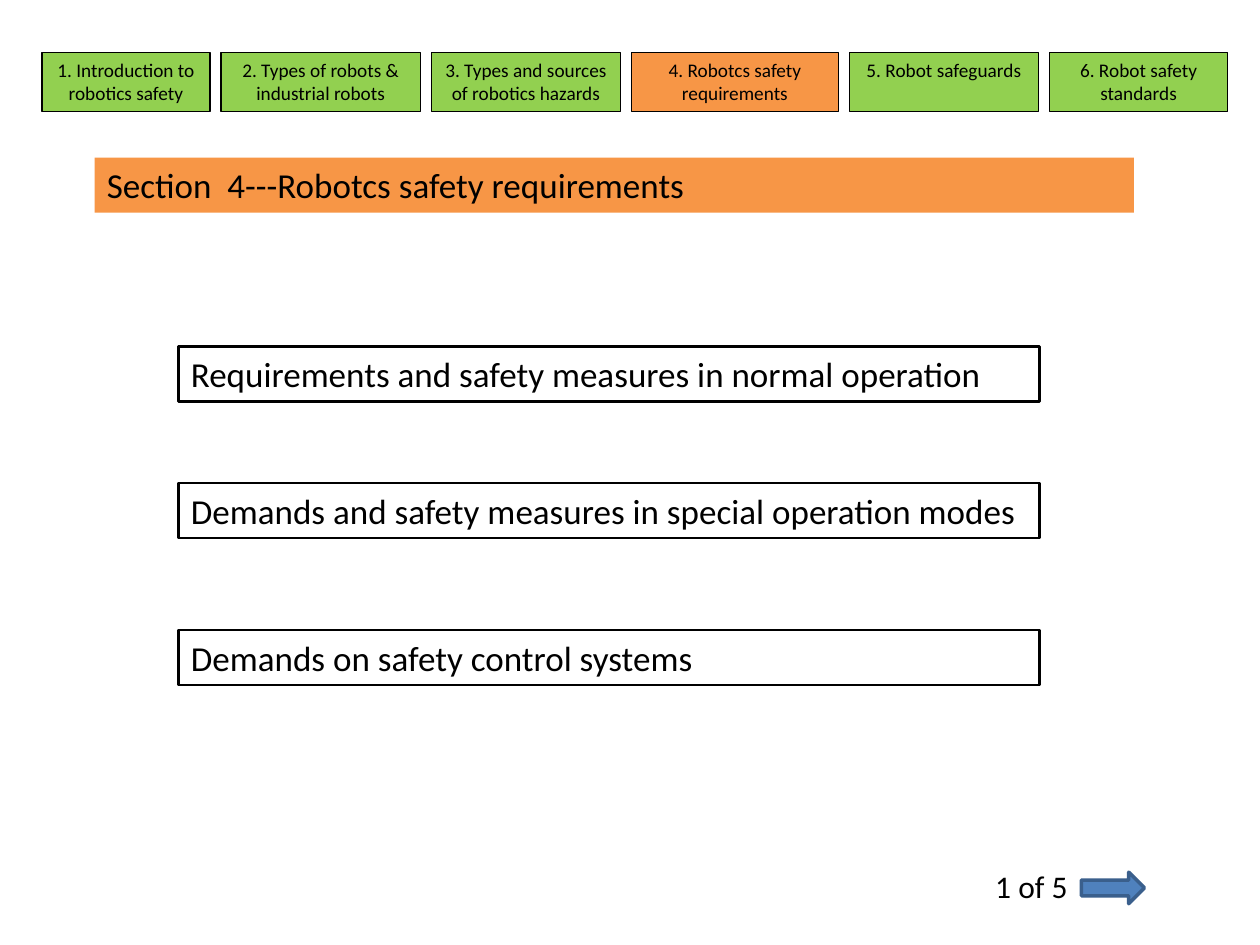
from pptx import Presentation
from pptx.dml.color import RGBColor as RGB
from pptx.enum.shapes import MSO_SHAPE as SHAPE
from pptx.enum.text import MSO_ANCHOR as ANCHOR, MSO_AUTO_SIZE as FIT, PP_ALIGN as ALIGN
from pptx.util import Inches, Pt

COLS, ROWS = 120, 90
COLORS = {"text": "000000", "tab": "92D050", "active": "F79646",
          "arrow": "4F81BD", "arrow_edge": "3A5F8C"}
TABS = [
    ("1. Introduction to robotics safety", 16),
    ("2. Types of robots & industrial robots", 19),
    ("3. Types and sources of robotics hazards", 18),
    ("4. Robotcs safety requirements", 19.7),
    ("5. Robot safeguards", 18),
    ("6. Robot safety standards", 17),
]
TOPICS = [
    ("Requirements and safety measures in normal operation", 0),
    ("Demands and safety measures in special operation modes", 13),
    ("Demands on safety control systems", 27),
]

prs = Presentation()
prs.slide_width, prs.slide_height = Inches(10), Inches(7.5)


def place(box):
    x, y, w, h = box
    col, row = prs.slide_width / COLS, prs.slide_height / ROWS
    return int(x * col), int(y * row), int(w * col), int(h * row)


def write(sp, text, size, align=ALIGN.LEFT):
    tf = sp.text_frame
    frame = {"word_wrap": True, "auto_size": FIT.SHAPE_TO_FIT_TEXT,
             "vertical_anchor": ANCHOR.TOP}
    for name, value in frame.items():
        setattr(tf, name, value)
    p = tf.paragraphs[0]
    p.alignment = align
    r = p.add_run()
    r.text = text
    for name, value in {"name": "Calibri", "size": Pt(size)}.items():
        setattr(r.font, name, value)
    r.font.color.rgb = RGB.from_string(COLORS["text"])


def add_shape(slide, box, fill=None, line=None, width=1, kind=SHAPE.RECTANGLE):
    sp = slide.shapes.add_shape(kind, *place(box))
    sp.shadow.inherit = False
    for part, color in ((sp.fill, fill), (sp.line.fill, line)):
        if color:
            part.solid()
            part.fore_color.rgb = RGB.from_string(COLORS[color])
        else:
            part.background()
    if line:
        sp.line.width = Pt(width)
    return sp


def add_tabs(slide, box, active, gap=1.05):
    x, y, _, h = box
    for i, (text, w) in enumerate(TABS):
        fill = "active" if i == active else "tab"
        sp = add_shape(slide, (x, y, w, h), fill, "text", 0.75)
        write(sp, text, 11, ALIGN.CENTER)
        x += w + gap


def add_heading(slide, box, text):
    write(add_shape(slide, box, "active"), text, 20)


def add_topics(slide, box):
    x, y, w, _ = box
    for text, row in TOPICS:
        sp = add_shape(slide, (x, y + row, w, 5.25), line="text", width=1.5)
        write(sp, text, 20)


def add_pager(slide, box, text):
    x, y, w, h = box
    label = slide.shapes.add_textbox(*place((x, y, w * 0.78, h)))
    write(label, text, 18)
    arrow = (x + w * 0.61, y + h * 0.22, w * 0.39, h * 0.62)
    add_shape(slide, arrow, "arrow", "arrow_edge", 2, SHAPE.RIGHT_ARROW)


def main():
    slide = prs.slides.add_slide(prs.slide_layouts[6])
    add_heading(slide, (9, 15, 99, 5.25), "Section  4---Robotcs safety requirements")
    add_pager(slide, (93.6, 82, 15.4, 4.85), "1 of 5")
    add_topics(slide, (17, 33, 82, 32.25))
    add_tabs(slide, (4, 5, 113, 5.65), active=3)
    prs.save("out.pptx")


if __name__ == "__main__":
    main()
